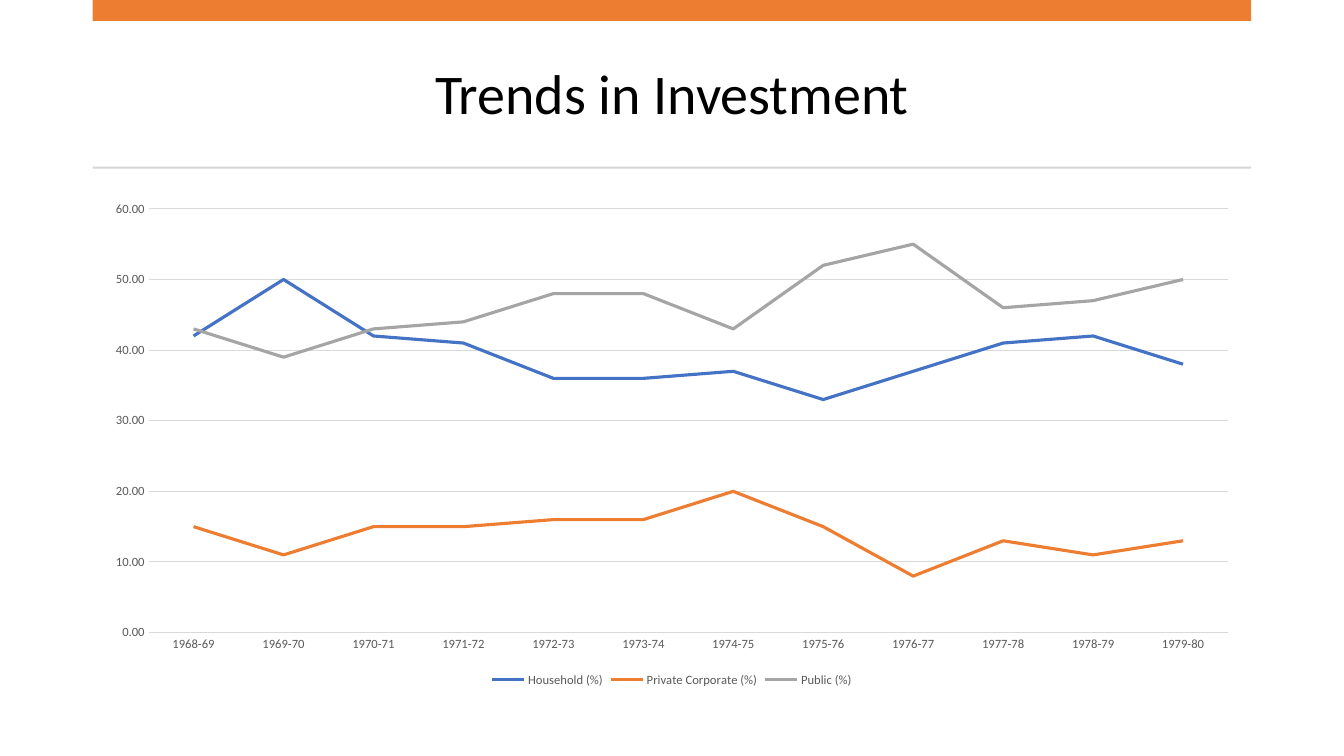
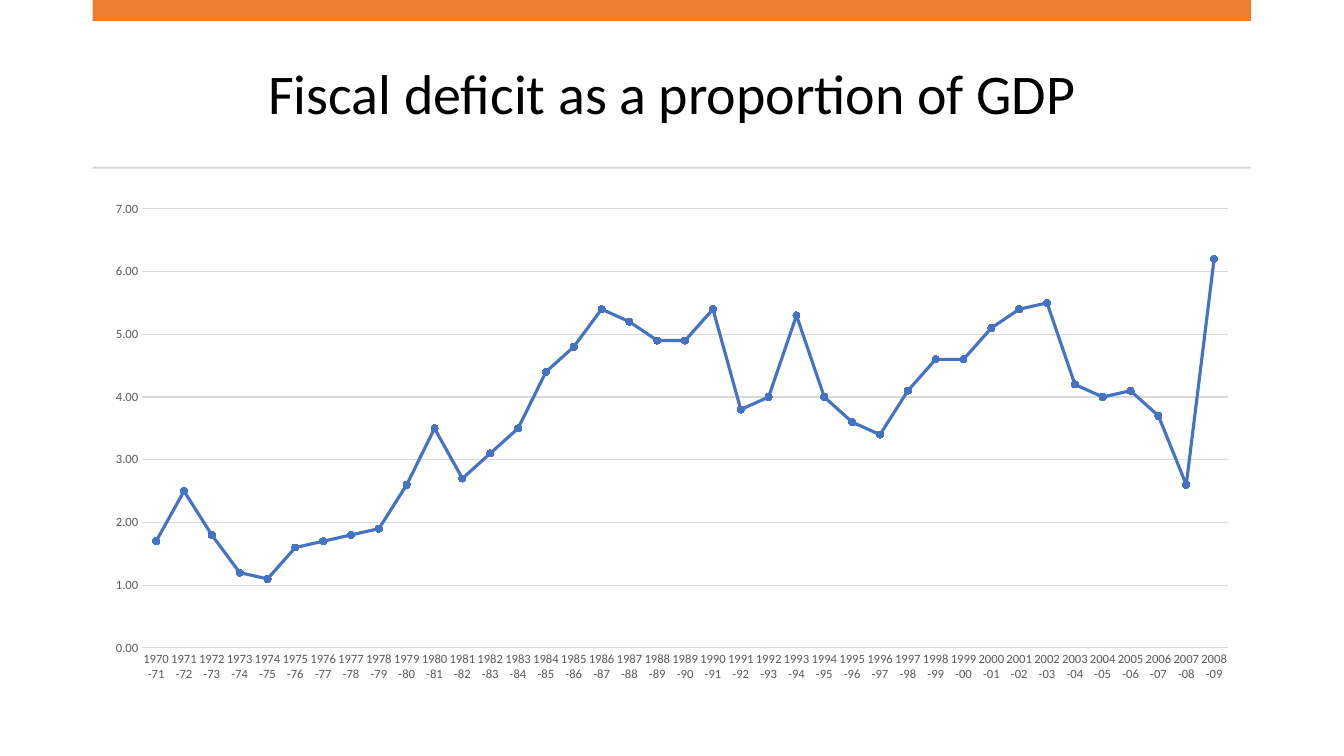
"""Build two slides of line charts on investment and fiscal deficit."""
from pptx import Presentation
from pptx.chart.data import CategoryChartData as Data
from pptx.dml.color import RGBColor as Rgb
from pptx.enum.chart import XL_CHART_TYPE as Kind, XL_LEGEND_POSITION as Spot
from pptx.enum.chart import XL_MARKER_STYLE as Mark, XL_TICK_MARK as Tick
from pptx.enum.shapes import MSO_SHAPE as Form
from pptx.enum.text import MSO_ANCHOR as Anchor, PP_ALIGN as Align
from pptx.oxml import parse_xml
from pptx.oxml.ns import nsdecls, qn
from pptx.util import Pt

PAGE_W, PAGE_H = 960, 540
SIDE = 66.25
WIDE = PAGE_W - 2 * SIDE
FACE = "Calibri"
BLUE, ORANGE, GREY = "4472C4", "ED7D31", "A5A5A5"
BLACK, LABEL, GRID, RULE = "000000", "595959", "D9D9D9", "D5D5D5"

INVEST = {
    "Household (%)": (42, 50, 42, 41, 36, 36, 37, 33, 37, 41, 42, 38),
    "Private Corporate (%)": (15, 11, 15, 15, 16, 16, 20, 15, 8, 13, 11, 13),
    "Public (%)": (43, 39, 43, 44, 48, 48, 43, 52, 55, 46, 47, 50),
}
DEFICIT = {
    "Series 1": (
        1.7, 2.5, 1.8, 1.2, 1.1, 1.6, 1.7, 1.8, 1.9, 2.6,
        3.5, 2.7, 3.1, 3.5, 4.4, 4.8, 5.4, 5.2, 4.9, 4.9,
        5.4, 3.8, 4, 5.3, 4, 3.6, 3.4, 4.1, 4.6, 4.6,
        5.1, 5.4, 5.5, 4.2, 4, 4.1, 3.7, 2.6, 6.2),
}


def tint(code):
    return Rgb.from_string(code)


def style(font, size, color):
    font.name, font.size = FACE, Pt(size)
    font.color.rgb = tint(color)


def stroke(line, color, width):
    line.color.rgb = tint(color)
    line.width = Pt(width)


def add_text(slide, text, top, high, size=40, color=BLACK, align=Align.CENTER):
    box = slide.shapes.add_textbox(Pt(SIDE), Pt(top), Pt(WIDE), Pt(high))
    frame = box.text_frame
    frame.word_wrap = True
    frame.vertical_anchor = Anchor.MIDDLE
    para = frame.paragraphs[0]
    para.alignment, para.line_spacing = align, 0.9
    run = para.add_run()
    run.text = text
    style(run.font, size, color)


def add_band(slide, top, high, color):
    band = slide.shapes.add_shape(
        Form.RECTANGLE, Pt(SIDE), Pt(top), Pt(WIDE), Pt(high))
    band.shadow.inherit = False
    band.fill.solid()
    band.fill.fore_color.rgb = tint(color)
    band.line.fill.background()


def set_axes(chart, peak, step):
    years, scale = chart.category_axis, chart.value_axis
    for axis in (years, scale):
        axis.major_tick_mark = axis.minor_tick_mark = Tick.NONE
        style(axis.tick_labels.font, 9, LABEL)
    stroke(years.format.line, GRID, 0.75)
    scale.format.line.fill.background()
    scale.has_major_gridlines = True
    stroke(scale.major_gridlines.format.line, GRID, 0.75)
    scale.minimum_scale, scale.maximum_scale = 0, peak
    scale.tick_labels.number_format = "0.00"
    scale.tick_labels.number_format_is_linked = False
    node = scale._element
    if node.find(qn("c:crossBetween")) is None:
        node.find(qn("c:crosses")).addnext(parse_xml(
            f'<c:crossBetween {nsdecls("c")} val="between"/>'))
    scale.major_unit = step


def add_lines(slide, start, rows, peak, step, dots=False, legend=False):
    data = Data(number_format="0.00")
    count = len(next(iter(rows.values())))
    data.categories = [
        f"{year}-{(year + 1) % 100:02d}" for year in range(start, start + count)]
    for name, vals in rows.items():
        data.add_series(name, vals)
    kind = Kind.LINE_MARKERS if dots else Kind.LINE
    chart = slide.shapes.add_chart(
        kind, Pt(SIDE), Pt(136.8), Pt(WIDE), Pt(357), data).chart
    style(chart.font, 10, BLACK)
    chart.has_title = False
    chart.has_legend = legend
    if legend:
        chart.legend.position = Spot.BOTTOM
        chart.legend.include_in_layout = False
        style(chart.legend.font, 9, LABEL)
    set_axes(chart, peak, step)
    plot = chart.plots[0]
    plot.vary_by_categories = False
    for line, color in zip(plot.series, (BLUE, ORANGE, GREY)):
        line.smooth = False
        stroke(line.format.line, color, 2.25)
        if dots:
            mark = line.marker
            mark.style, mark.size = Mark.CIRCLE, 5
            mark.format.fill.solid()
            mark.format.fill.fore_color.rgb = tint(color)
            stroke(mark.format.line, color, 0.75)


def add_page(deck, title):
    slide = deck.slides.add_slide(deck.slide_layouts[6])
    add_text(slide, title, 26.6, 85)
    add_band(slide, 0, 15, ORANGE)
    add_band(slide, 119, 1.5, RULE)
    return slide


def main():
    deck = Presentation()
    deck.slide_width, deck.slide_height = Pt(PAGE_W), Pt(PAGE_H)
    page = add_page(deck, "Trends in Investment")
    add_lines(page, 1968, INVEST, peak=60, step=10, legend=True)
    page = add_page(deck, "Fiscal deficit as a proportion of GDP")
    add_lines(page, 1970, DEFICIT, peak=7, step=1, dots=True)
    deck.save("out.pptx")


if __name__ == "__main__":
    main()
